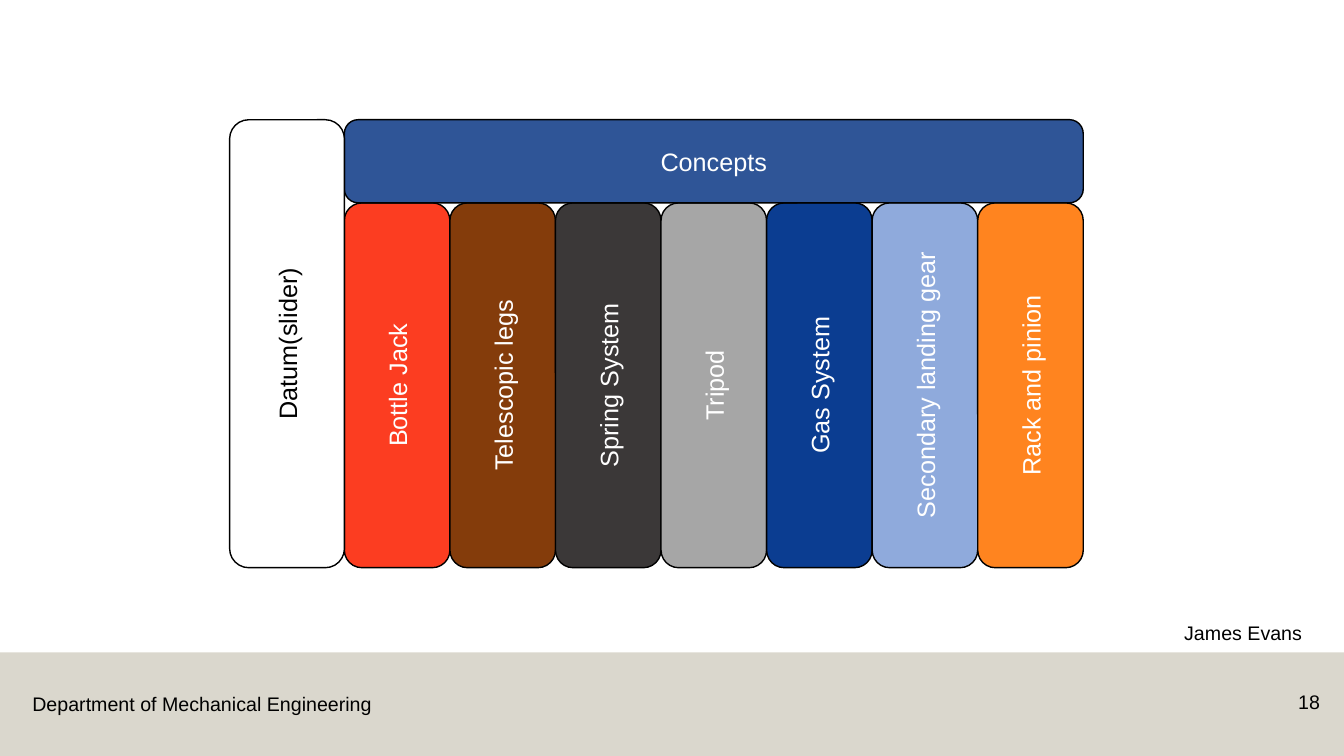
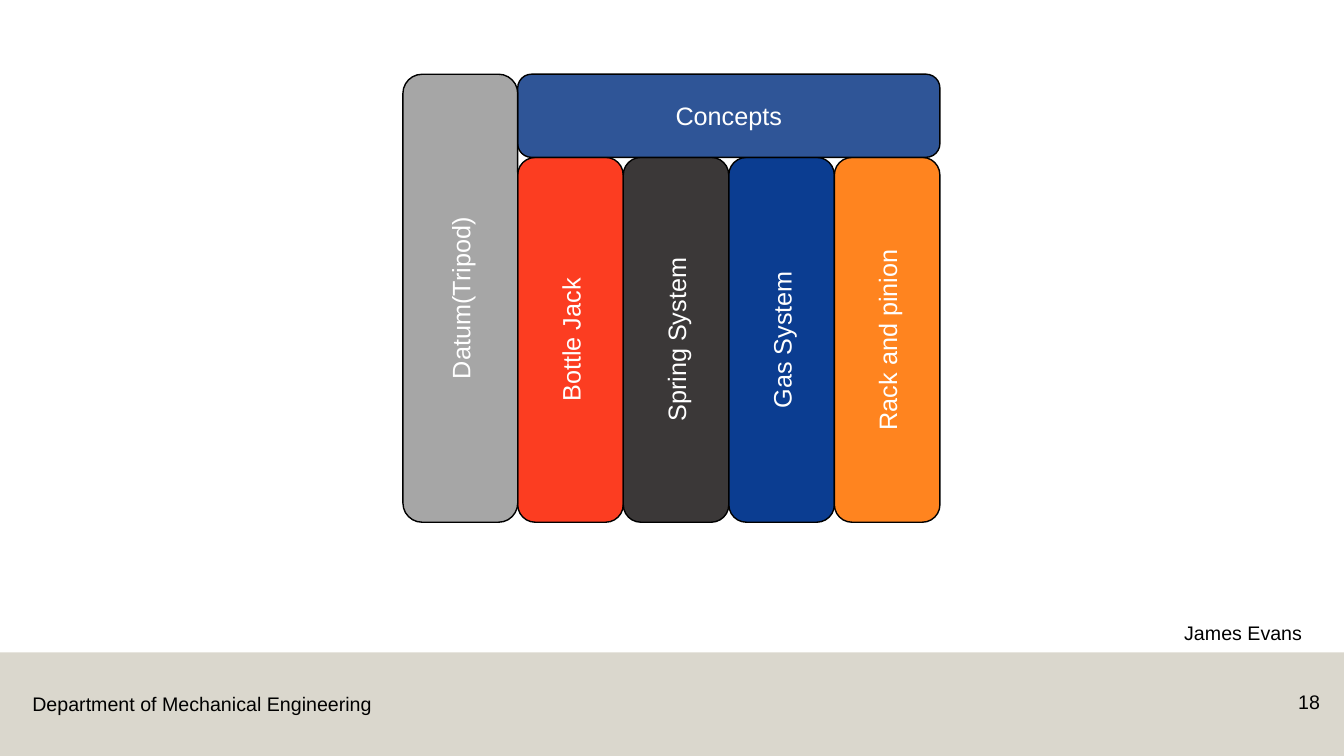
from pptx import Presentation
from pptx.util import Pt
from pptx.dml.color import RGBColor
from pptx.enum.shapes import MSO_SHAPE
from pptx.enum.text import MSO_ANCHOR, MSO_AUTO_SIZE, PP_ALIGN
from lxml.etree import SubElement
from pptx.oxml.ns import qn

HUES = {
    "black": "000000", "white": "FFFFFF", "band": "B7B09C",
    "head": "2F5597", "red": "FC3D21", "brown": "843C0B",
    "dark": "3B3838", "grey": "A6A6A6", "navy": "0B3D91",
    "pale": "8FAADC", "orange": "FF841F",
}
FONT = "Arial"
WIDE, HIGH = 960, 540
BAND = 466  # top of the footer band
DATUM, COL, HEAD, TALL = 82, 75.4, 59.4, 320

JACK = ("Bottle Jack", "red")
LEGS = ("Telescopic legs", "brown")
SPRING = ("Spring System", "dark")
TRIPOD = ("Tripod", "grey")
GAS = ("Gas System", "navy")
GEAR = ("Secondary landing gear", "pale")
RACK = ("Rack and pinion", "orange")


def hue(name):
    return RGBColor.from_string(HUES[name])


def write(frame, text, size, ink="black", align=PP_ALIGN.LEFT):
    frame.text = text
    para = frame.paragraphs[0]
    para.alignment = align
    para.space_before = Pt(0)
    para.font.name = FONT
    para.font.size = Pt(size)
    para.font.color.rgb = hue(ink)
    return para


def label(slide, box, text, align=PP_ALIGN.LEFT):
    note = slide.shapes.add_textbox(*map(Pt, box))
    note.text_frame.word_wrap = True
    write(note.text_frame, text, 14, align=align)


def footer(slide, box, page):
    x, y, w, h = box
    # Half-transparent band
    band = slide.shapes.add_shape(MSO_SHAPE.RECTANGLE, *map(Pt, box))
    band.shadow.inherit = False
    band.line.fill.background()
    band.fill.solid()
    band.fill.fore_color.rgb = hue("band")
    tint = band.fill._xPr.find(".//" + qn("a:srgbClr"))
    SubElement(tint, qn("a:alpha"), val="50000")
    # Department and page number
    label(slide, (x + 16, y + 25, 270, 24),
          "Department of Mechanical Engineering")
    label(slide, (x + w - 66, y + 23, 56, 28), page, PP_ALIGN.RIGHT)


def author(slide, box, name):
    slide.shapes.title.element.getparent().remove(slide.shapes.title.element)
    body = slide.placeholders[1]
    body.left, body.top, body.width, body.height = map(Pt, box)
    frame = body.text_frame
    frame.auto_size = MSO_AUTO_SIZE.NONE
    frame.vertical_anchor = MSO_ANCHOR.TOP
    para = write(frame, name, 14, align=PP_ALIGN.CENTER)
    para.line_spacing = 0.9


def tile(slide, box, text, fill, ink="white"):
    x, y, w, h = box
    upright = h > w
    if upright:  # turn a wide shape about its centre
        x, y, w, h = x + (w - h) / 2, y + (h - w) / 2, h, w
    card = slide.shapes.add_shape(
        MSO_SHAPE.ROUNDED_RECTANGLE, *map(Pt, (x, y, w, h)))
    card.rotation = 270 if upright else 0
    card.shadow.inherit = False
    card.fill.solid()
    card.fill.fore_color.rgb = hue(fill)
    card.line.color.rgb = hue("black")
    card.line.width = Pt(1)
    card.text_frame.vertical_anchor = MSO_ANCHOR.MIDDLE
    write(card.text_frame, text, 18, ink, PP_ALIGN.CENTER)


def matrix(slide, spot, datum, ideas):
    x, y = spot
    left, top = x + DATUM, y + HEAD
    # Concept columns
    for i, (text, fill) in enumerate(ideas):
        tile(slide, (left + i * COL, top, COL, TALL - HEAD), text, fill)
    # Header and datum
    tile(slide, (left, y, len(ideas) * COL, HEAD), "Concepts", "head")
    tile(slide, (x, y, DATUM, TALL), *datum)


def build(deck, spot, datum, ideas):
    slide = deck.slides.add_slide(deck.slide_layouts[2])
    footer(slide, (0, BAND, WIDE, HIGH - BAND), "18")
    author(slide, (816, BAND - 24, 144, 24), "James Evans")
    matrix(slide, spot, datum, ideas)


def main():
    deck = Presentation()
    deck.slide_width, deck.slide_height = Pt(WIDE), Pt(HIGH)
    build(deck, (164, 85.5), ("Datum(slider)", "white", "black"),
          [JACK, LEGS, SPRING, TRIPOD, GAS, GEAR, RACK])
    build(deck, (287.8, 53), ("Datum(Tripod)", "grey"),
          [JACK, SPRING, GAS, RACK])
    deck.save("out.pptx")


if __name__ == "__main__":
    main()
